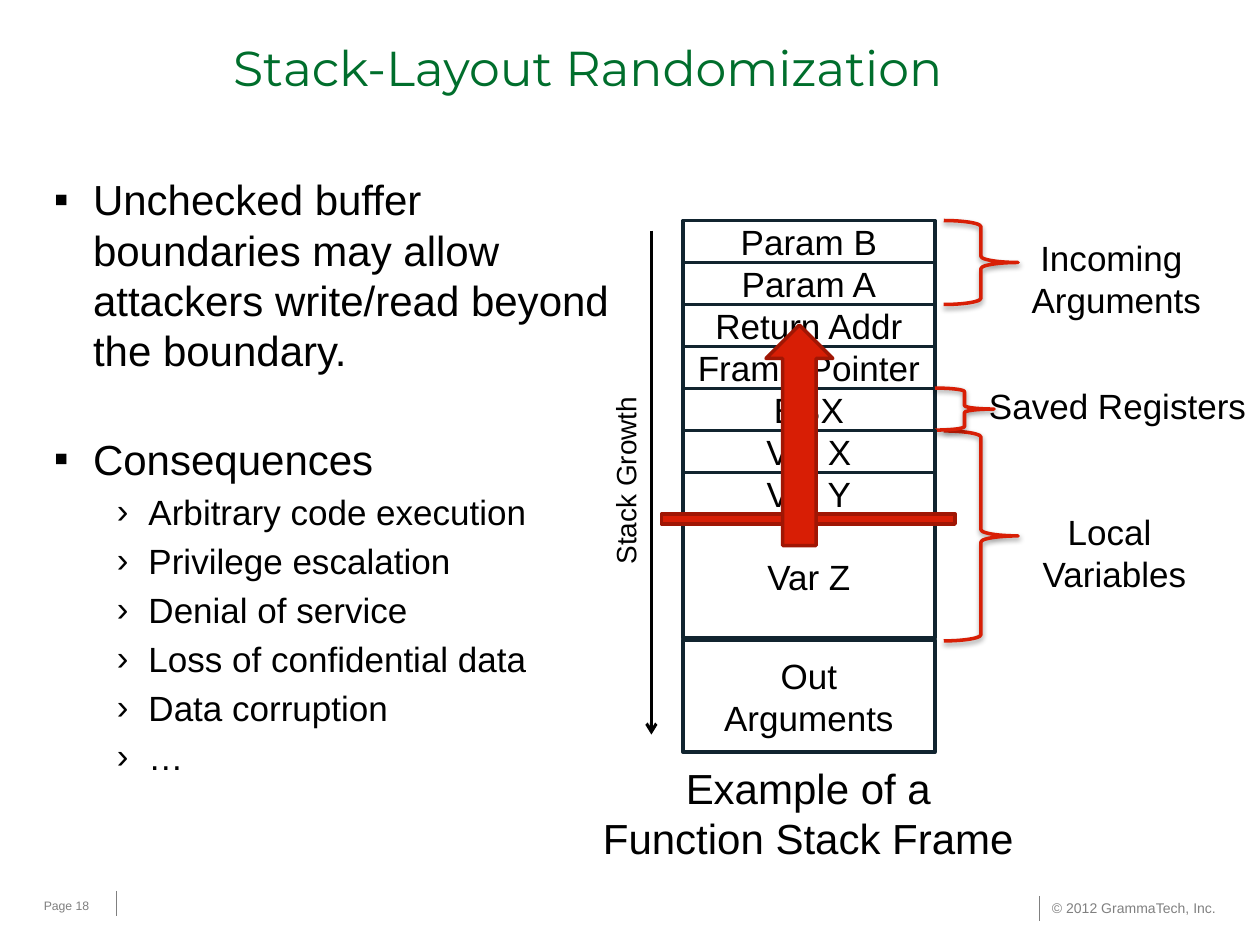
from lxml import etree
from pptx import Presentation
from pptx.dml.color import RGBColor
from pptx.enum.shapes import MSO_CONNECTOR, MSO_SHAPE
from pptx.enum.text import MSO_ANCHOR, MSO_AUTO_SIZE, PP_ALIGN
from pptx.oxml import parse_xml
from pptx.oxml.ns import nsdecls, qn
from pptx.util import Inches, Pt

RECTANGLE, BRACE, UP_ARROW = MSO_SHAPE.RECTANGLE, MSO_SHAPE.RIGHT_BRACE, MSO_SHAPE.UP_ARROW
STRAIGHT = MSO_CONNECTOR.STRAIGHT
TOP, MIDDLE = MSO_ANCHOR.TOP, MSO_ANCHOR.MIDDLE
LEFT, CENTER = PP_ALIGN.LEFT, PP_ALIGN.CENTER
NO_AUTOFIT = MSO_AUTO_SIZE.NONE

GREEN = RGBColor(0x00, 0x6E, 0x2C)
BLACK = RGBColor(0x00, 0x00, 0x00)
WHITE = RGBColor(0xFF, 0xFF, 0xFF)
GRAY = RGBColor(0x80, 0x80, 0x80)
NAVY = RGBColor(0x11, 0x24, 0x2F)
RED = RGBColor(0xD8, 0x1E, 0x05)
DARK_RED = RGBColor(0xA0, 0x16, 0x04)

STACK_LEFT, STACK_TOP, STACK_WIDTH = 5.42, 1.75, 2
SLOT = 1 / 3

POINTS = [
    ("Unchecked buffer boundaries may allow attackers write/read beyond the boundary.", 0, 0),
    ("Consequences", 0, 33),
    ("Arbitrary code execution", 1, 4),
    ("Privilege escalation", 1, 4),
    ("Denial of service", 1, 4),
    ("Loss of confidential data", 1, 4),
    ("Data corruption", 1, 4),
    ("…", 1, 4),
]
BULLETS = [("▪", 0.31, 0.31, 24), ("›", 0.75, 0.25, 20)]


def box(left, top, width, height):
    """Return a position and size as lengths."""
    return Inches(left), Inches(top), Inches(width), Inches(height)


def add_run(paragraph, text, size, color=BLACK, font="Arial"):
    """Append one formatted run."""
    run = paragraph.add_run()
    run.text = text
    run.font.size = Pt(size)
    run.font.name = font
    run.font.color.rgb = color


def add_label(slide, place, lines, size, color=BLACK, align=CENTER, anchor=TOP, vert=None):
    """Add a text box with one paragraph per line."""
    label = slide.shapes.add_textbox(*box(*place))
    frame = label.text_frame
    frame.word_wrap = False
    frame.vertical_anchor = anchor
    if vert:
        label._element.txBody.find(qn("a:bodyPr")).set("vert", vert)
    for index, line in enumerate(lines):
        paragraph = frame.add_paragraph() if index else frame.paragraphs[0]
        paragraph.alignment = align
        add_run(paragraph, line, size, color)


def add_filled(shapes, preset, place, fill, outline):
    """Add a filled, outlined shape without a shadow."""
    shape = shapes.add_shape(preset, *box(*place))
    shape.shadow.inherit = False
    shape.fill.solid()
    shape.fill.fore_color.rgb = fill
    shape.line.color.rgb = outline
    shape.line.width = Pt(2)
    return shape


def add_slot(shapes, name, top, height=SLOT):
    """Add one named slot of the stack frame."""
    slot = add_filled(shapes, RECTANGLE, (STACK_LEFT, top, STACK_WIDTH, height), WHITE, NAVY)
    slot.text_frame.word_wrap = True
    slot.text_frame.vertical_anchor = MIDDLE
    paragraph = slot.text_frame.paragraphs[0]
    paragraph.alignment = CENTER
    add_run(paragraph, name, 20)


def add_brace(slide, place):
    """Add a red right brace with a soft shadow."""
    brace = slide.shapes.add_shape(BRACE, *box(*place))
    brace.fill.background()
    brace.line.color.rgb = RED
    brace.line.width = Pt(2)
    brace._element.spPr.append(parse_xml(
        f'<a:effectLst {nsdecls("a")}><a:outerShdw blurRad="{Pt(3.1)}" dist="{Pt(1.6)}" '
        'dir="5400000" rotWithShape="0"><a:srgbClr val="000000"><a:alpha val="38000"/>'
        '</a:srgbClr></a:outerShdw></a:effectLst>'))


def add_line(slide, x, top, bottom, color, width, arrow=False):
    """Add a vertical line, with an arrowhead at the bottom if asked."""
    line = slide.shapes.add_connector(STRAIGHT, Inches(x), Inches(top), Inches(x), Inches(bottom))
    line.line.color.rgb = color
    line.line.width = Pt(width)
    if arrow:
        etree.SubElement(line.line._get_or_add_ln(), qn("a:tailEnd"), type="arrow")
    etree.SubElement(line._element.spPr, qn("a:effectLst"))


def add_title(slide, text):
    """Place and format the title."""
    title = slide.shapes.title
    title.left, title.top, title.width, title.height = box(1.75, 0.25, 8, 0.92)
    frame = title.text_frame
    frame.vertical_anchor = TOP
    frame.auto_size = NO_AUTOFIT
    frame.paragraphs[0].alignment = LEFT
    add_run(frame.paragraphs[0], text, 28, GREEN, "Montserrat")


def add_points(slide):
    """Add the two-level bullet list."""
    frame = slide.shapes.add_textbox(*box(0.33, 1.33, 4.62, 5.42)).text_frame
    frame.word_wrap = True
    for index, (text, level, space) in enumerate(POINTS):
        bullet, margin, hanging, size = BULLETS[level]
        paragraph = frame.add_paragraph() if index else frame.paragraphs[0]
        paragraph.level = level
        properties = paragraph._p.get_or_add_pPr()
        properties.set("marL", str(Inches(margin)))
        properties.set("indent", str(-Inches(hanging)))
        etree.SubElement(properties, qn("a:buFont"), typeface="Arial")
        etree.SubElement(properties, qn("a:buChar"), char=bullet)
        if index:
            paragraph.space_before = Pt(space)
        add_run(paragraph, text, size)


def add_stack(slide):
    """Add the stack frame with its braces and labels."""
    shapes = slide.shapes
    for index, name in enumerate(["Param B", "Param A", "Return Addr", "Frame Pointer", "EBX"]):
        add_slot(shapes, name, STACK_TOP + index * SLOT)
    add_slot(shapes, "Out Arguments", 5.08, 0.89)
    add_brace(slide, (7.49, 3.42, 0.59, 5 * SLOT))
    add_brace(slide, (7.42, 3.08, 0.47, SLOT))
    add_brace(slide, (7.49, STACK_TOP, 0.59, 2 * SLOT))
    add_label(slide, (8.08, 1.83, 1.56, 0.77), ["Incoming ", "Arguments"], 20)
    add_label(slide, (7.74, 3, 2.26, 0.44), ["Saved Registers"], 20)
    add_label(slide, (8.17, 4, 1.35, 0.77), ["Local ", "Variables"], 20)
    variables = shapes.add_group_shape().shapes
    add_slot(variables, "Var Z", STACK_TOP + 7 * SLOT, 0.98)
    add_slot(variables, "Var X", STACK_TOP + 5 * SLOT)
    add_slot(variables, "Var Y", STACK_TOP + 6 * SLOT)
    add_label(slide, (4.67, 6, 3.49, 0.91), ["Example of a", "Function Stack Frame"], 24)


def add_overflow(slide):
    """Add the buffer boundary, the overflow arrow and the growth direction."""
    add_filled(slide.shapes, RECTANGLE, (5.25, 4.08, 2.33, 0.08), RED, DARK_RED)
    add_filled(slide.shapes, UP_ARROW, (6.08, 2.58, 0.53, 1.75), RED, DARK_RED)
    add_line(slide, 5.17, 1.83, 5.83, BLACK, 1.75, arrow=True)
    add_label(slide, (4.78, 3.09, 0.47, 1.45), ["Stack Growth"], 16, vert="vert270")


def add_footer(slide):
    """Add the page number, the copyright line and their rules."""
    add_line(slide, 8.25, 7.11, 7.31, GRAY, 0.25)
    add_line(slide, 0.92, 7.07, 7.27, GRAY, 0.25)
    add_label(slide, (8.25, 7.09, 1.53, 0.24), ["© 2012 GrammaTech, Inc."], 8, GRAY, LEFT)
    add_label(slide, (0.25, 7.02, 0.67, 0.33), ["Page 18"], 7, GRAY, LEFT, MIDDLE)


def main():
    """Build the slide and save it."""
    deck = Presentation()
    deck.slide_width, deck.slide_height = Inches(10), Inches(7.5)
    slide = deck.slides.add_slide(deck.slide_layouts[5])
    add_footer(slide)
    add_title(slide, "Stack-Layout Randomization")
    add_points(slide)
    add_stack(slide)
    add_overflow(slide)
    deck.save("out.pptx")


if __name__ == "__main__":
    main()
